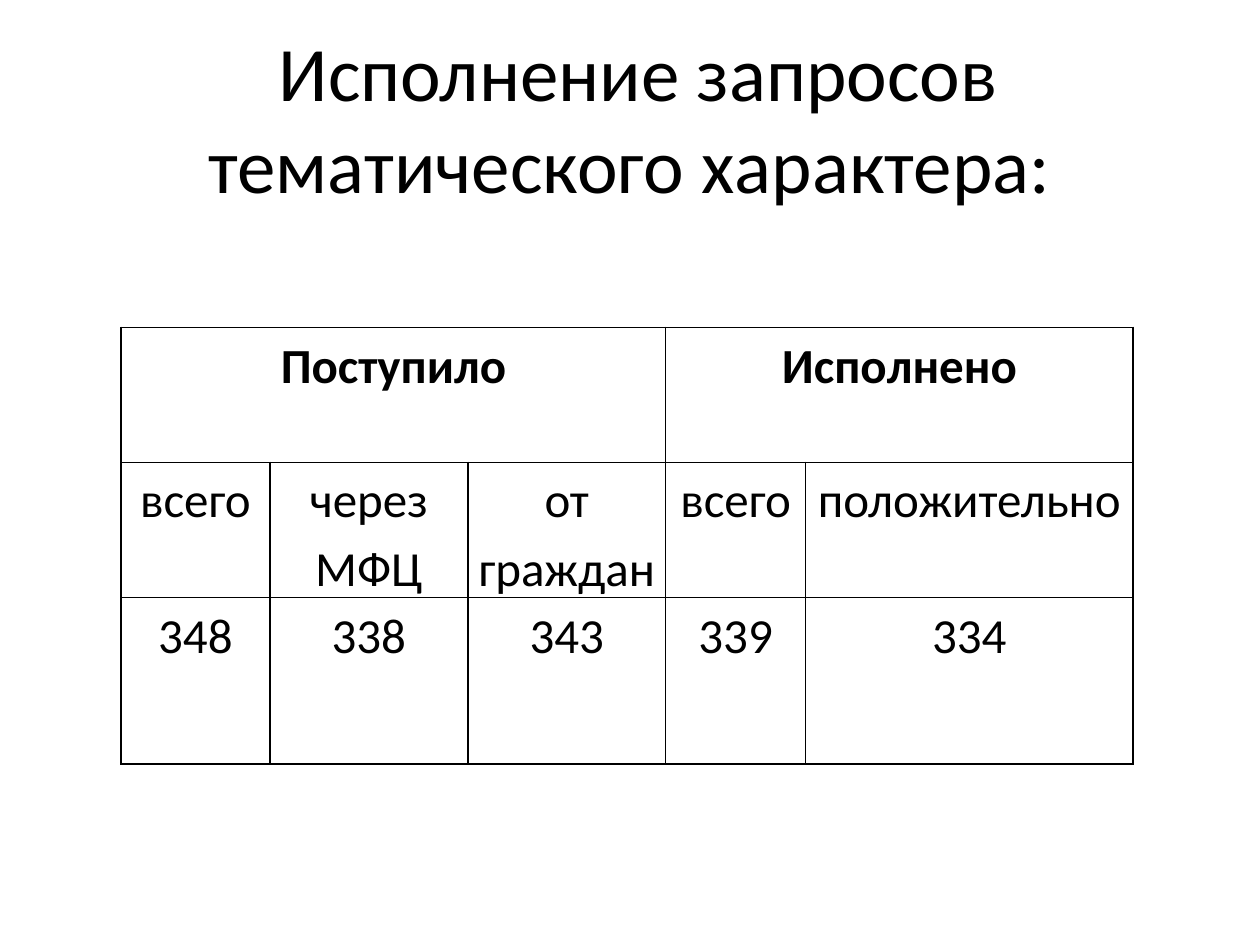
from lxml import etree
from pptx import Presentation
from pptx import util as u
from pptx.dml.color import RGBColor
from pptx.enum import text
from pptx.oxml.ns import qn

BLACK = RGBColor(0x00, 0x00, 0x00)
FONT = "Calibri"

TITLE = [" Исполнение запросов", "тематического характера:"]
COLUMNS = [3, 3.99, 3.99, 2.82, 6.6]
ROWS = [2.72, 2.72, 3.35]
GROUPS = [("Поступило", 0, 2), ("Исполнено", 3, 4)]
BODY = [
    ["всего", "через МФЦ", "от граждан", "всего", "положительно"],
    ["348", "338", "343", "339", "334"],
]


def style(p, size, bold=False):
    p.alignment = text.PP_ALIGN.CENTER
    p.font.name = FONT
    p.font.size = u.Pt(size)
    p.font.bold = bold
    p.font.color.rgb = BLACK


def add_borders(cell):
    tc_pr = cell._tc.get_or_add_tcPr()
    for i, side in enumerate(("lnL", "lnR", "lnT", "lnB")):
        ln = etree.Element(qn(f"a:{side}"), w=str(u.Pt(1)))
        fill = etree.SubElement(ln, qn("a:solidFill"))
        etree.SubElement(fill, qn("a:srgbClr"), val=str(BLACK))
        tc_pr.insert(i, ln)


def fill_cell(cell, value, bold=False):
    cell.text = value
    p = cell.text_frame.paragraphs[0]
    style(p, 28, bold)
    p.line_spacing = 1.15


def add_title(s, left, top, width, height):
    tf = s.shapes.add_textbox(left, top, width, height).text_frame
    tf.word_wrap = True
    tf.vertical_anchor = text.MSO_ANCHOR.MIDDLE
    tf.text = "\n".join(TITLE)
    for p in tf.paragraphs:
        style(p, 44)


def add_requests_table(s, left, top):
    table = s.shapes.add_table(
        len(ROWS), len(COLUMNS), left, top, u.Cm(sum(COLUMNS)), u.Cm(sum(ROWS))
    ).table
    table.first_row = table.horz_banding = False
    for column, width in zip(table.columns, COLUMNS):
        column.width = u.Cm(width)
    for row, height in zip(table.rows, ROWS):
        row.height = u.Cm(height)

    # Plain cells with a thin black grid
    for cell in table.iter_cells():
        cell.margin_left = cell.margin_right = u.Cm(0.18)
        cell.margin_top = cell.margin_bottom = 0
        cell.fill.background()
        add_borders(cell)

    # Group headings over their columns
    for name, first, last in GROUPS:
        table.cell(0, first).merge(table.cell(0, last))
        fill_cell(table.cell(0, first), name, bold=True)

    # Column headings and counts
    for r, values in enumerate(BODY, start=1):
        for c, value in enumerate(values):
            fill_cell(table.cell(r, c), value)


def main():
    prs = Presentation()
    prs.slide_width, prs.slide_height = u.Cm(25.4), u.Cm(19.05)
    s = prs.slides.add_slide(prs.slide_layouts[6])
    add_title(s, u.Cm(1.27), u.Cm(0.76), u.Cm(22.86), u.Cm(3.18))
    add_requests_table(s, u.Cm(2.44), u.Cm(6.6))
    prs.save("out.pptx")


if __name__ == "__main__":
    main()
